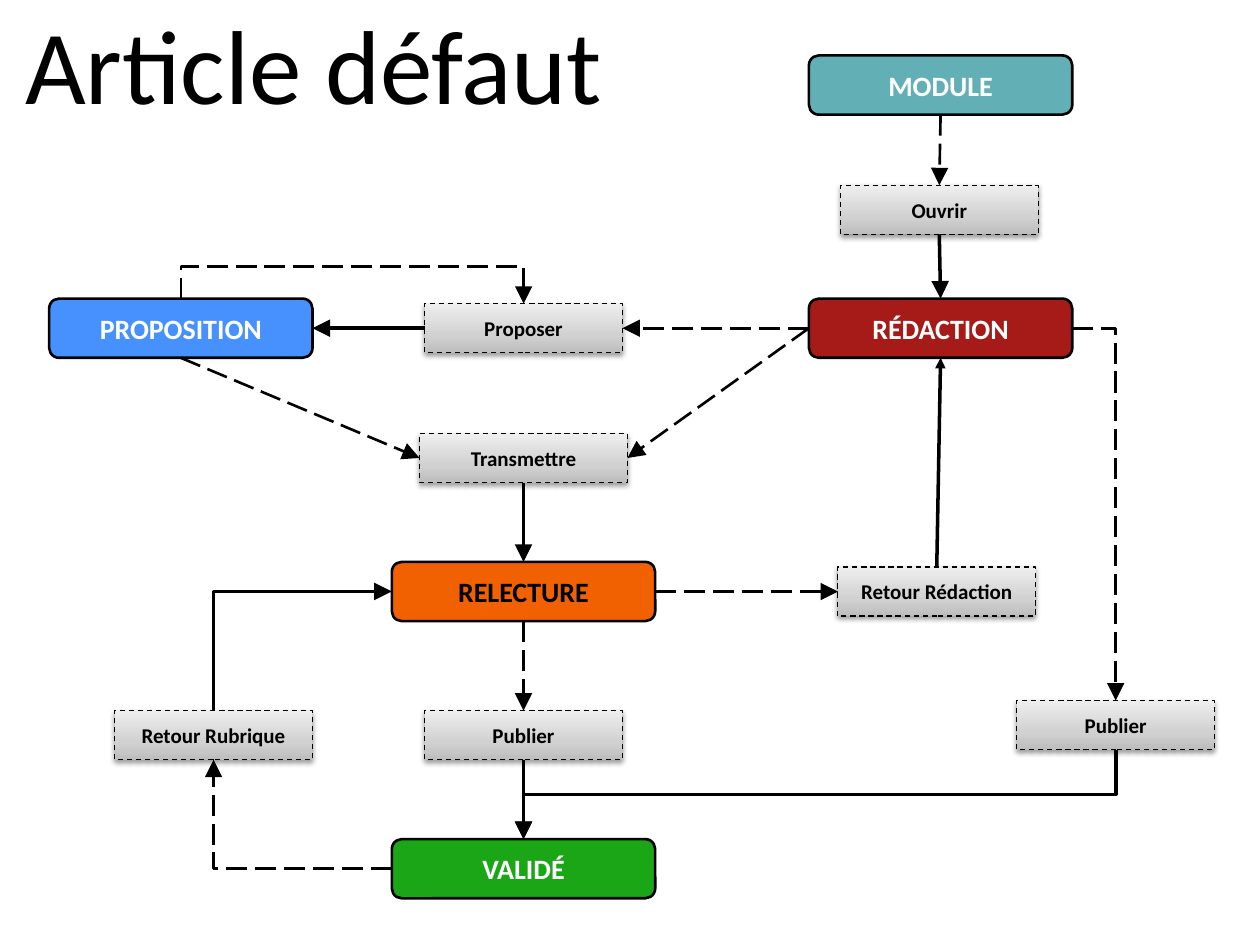
from lxml.etree import SubElement
from pptx import Presentation
from pptx.dml.color import RGBColor
from pptx.enum.dml import MSO_LINE
from pptx.enum.shapes import MSO_CONNECTOR, MSO_SHAPE
from pptx.enum.text import MSO_ANCHOR, PP_ALIGN
from pptx.oxml.ns import qn
from pptx.util import Inches, Pt

# Content: states as key: (left, top, fill, text colour)
TITLE = "Article défaut"
STATES = {
    "RÉDACTION": (6.42, 2.37, "A61B17", "FFFFFF"),
    "PROPOSITION": (0.39, 2.37, "4791FF", "FFFFFF"),
    "RELECTURE": (3.11, 4.46, "F26101", "000000"),
    "VALIDÉ": (3.11, 6.66, "1BA617", "FFFFFF"),
    "MODULE": (6.42, 0.44, "62B0B6", "FFFFFF"),
}
# Actions as key: (label, left, top, width)
ACTIONS = {
    "proposer": ("Proposer", 3.37, 2.41, 1.57),
    "transmettre": ("Transmettre", 3.33, 3.44, 1.65),
    "publier": ("Publier", 3.37, 5.64, 1.57),
    "retour rédaction": ("Retour Rédaction", 6.65, 4.5, 1.57),
    "ouvrir": ("Ouvrir", 6.67, 1.47, 1.57),
    "publier direct": ("Publier", 8.07, 5.56, 1.57),
    "retour rubrique": ("Retour Rubrique", 0.91, 5.64, 1.57),
}
TOP, LEFT, BOTTOM, RIGHT = range(4)  # connection sites
# Straight arrows: from, site, to, site; those leaving a state are dashed
ARROWS = [
    ("RÉDACTION", LEFT, "proposer", RIGHT),
    ("RÉDACTION", LEFT, "transmettre", RIGHT),
    ("proposer", LEFT, "PROPOSITION", RIGHT),
    ("PROPOSITION", BOTTOM, "transmettre", LEFT),
    ("RELECTURE", BOTTOM, "publier", TOP),
    ("transmettre", BOTTOM, "RELECTURE", TOP),
    ("publier", BOTTOM, "VALIDÉ", TOP),
    ("RELECTURE", RIGHT, "retour rédaction", LEFT),
    ("retour rédaction", TOP, "RÉDACTION", BOTTOM),
    ("ouvrir", BOTTOM, "RÉDACTION", TOP),
    ("MODULE", BOTTOM, "ouvrir", TOP),
]
# Bent arrows add: preset, rotation, flips, adjustment
BENT_ARROWS = [
    ("RÉDACTION", RIGHT, "publier direct", TOP, "bentConnector2", 0, (), None),
    ("PROPOSITION", TOP, "proposer", TOP, "bentConnector3", 270, ("flipH",), -635100),
    ("publier direct", BOTTOM, "VALIDÉ", TOP, "bentConnector3", 90, (), 50000),
    ("VALIDÉ", LEFT, "retour rubrique", BOTTOM, "bentConnector2", 180, (), None),
    ("retour rubrique", TOP, "RELECTURE", LEFT, "bentConnector2", 90, ("flipH", "flipV"), None),
]
GRADIENT = [(0, "BDBDBD"), (35, "D1D1D1"), (100, "EEEEEE")]
STATE_FONT = {"name": "Calibri", "size": Pt(16), "bold": True}
ACTION_FONT = {"name": "Calibri", "size": Pt(12), "bold": True}
TITLE_FONT = {"name": "Calibri", "size": Pt(60)}


def color(value):
    return RGBColor.from_string(value)


def write(box, text, font_format, text_color):
    frame = box.text_frame
    frame.vertical_anchor = MSO_ANCHOR.MIDDLE
    para = frame.paragraphs[0]
    para.alignment = PP_ALIGN.CENTER
    span = para.add_run()
    span.text = text
    for name, value in font_format.items():
        setattr(span.font, name, value)
    span.font.color.rgb = color(text_color)


def add_box(preset, left, top, width, height, line_width):
    box = slide.shapes.add_shape(
        preset, Inches(left), Inches(top), Inches(width), Inches(height))
    box.shadow.inherit = False
    box.line.color.rgb = color("000000")
    box.line.width = Pt(line_width)
    return box


def shade(box):
    """Three-stop grey gradient, lightest at the top, with a soft shadow."""
    box.fill.gradient()
    box.fill.gradient_angle = 90
    properties = box.element.spPr
    stops = properties.find(".//" + qn("a:gsLst"))
    for stop in list(stops):
        stops.remove(stop)
    for position, value in GRADIENT:
        stop = SubElement(stops, qn("a:gs"), pos=str(position * 1000))
        SubElement(stop, qn("a:srgbClr"), val=value)
    shadow = SubElement(
        properties.find(qn("a:effectLst")), qn("a:outerShdw"),
        blurRad=str(Pt(3.1)), dist=str(Pt(1.6)), dir="5400000", rotWithShape="0")
    tint = SubElement(shadow, qn("a:srgbClr"), val="000000")
    SubElement(tint, qn("a:alpha"), val="38000")


def add_arrow(kind, start, start_site, end, end_site):
    arrow = slide.shapes.add_connector(kind, 0, 0, 0, 0)
    arrow.begin_connect(boxes[start], start_site)
    arrow.end_connect(boxes[end], end_site)
    dashed = start in STATES
    arrow.line.color.rgb = color("000000")
    arrow.line.width = Pt(1.5 if dashed else 2)
    if dashed:
        arrow.line.dash_style = MSO_LINE.LONG_DASH
    size = "med" if start == "retour rédaction" else "lg"
    properties = arrow.element.spPr
    SubElement(properties.find(qn("a:ln")), qn("a:tailEnd"),
               type="triangle", w=size, len=size)
    SubElement(properties, qn("a:effectLst"))
    return arrow


def bend(arrow, preset, rotation, flips, adjustment):
    """Turn the connector about its centre so that it leaves the right side."""
    if rotation in (90, 270):
        shift = (arrow.width - arrow.height) // 2
        arrow.left, arrow.top = arrow.left + shift, arrow.top - shift
        arrow.width, arrow.height = arrow.height, arrow.width
    frame = arrow.element.spPr.find(qn("a:xfrm"))
    frame.set("rot", str(rotation * 60000))
    for flip in ("flipH", "flipV"):
        frame.set(flip, "1" if flip in flips else "0")
    geometry = arrow.element.spPr.find(qn("a:prstGeom"))
    geometry.set("prst", preset)
    if adjustment is not None:
        guides = geometry.find(qn("a:avLst"))
        SubElement(guides, qn("a:gd"), name="adj1", fmla=f"val {adjustment}")


deck = Presentation()
deck.slide_width, deck.slide_height = Inches(10), Inches(7.5)
slide = deck.slides.add_slide(deck.slide_layouts[5])

# Title
title = slide.shapes.title
title.left, title.top, title.width, title.height = 0, 0, Inches(4.98), Inches(0.99)
write(title, TITLE, TITLE_FONT, "000000")

# States and actions
boxes = {}
for label, (left, top, fill, text_color) in STATES.items():
    box = add_box(MSO_SHAPE.ROUNDED_RECTANGLE, left, top, 2.09, 0.47, 1.5)
    box.fill.solid()
    box.fill.fore_color.rgb = color(fill)
    write(box, label, STATE_FONT, text_color)
    boxes[label] = box
for key, (label, left, top, width) in ACTIONS.items():
    box = add_box(MSO_SHAPE.RECTANGLE, left, top, width, 0.39, 0.75)
    box.line.dash_style = MSO_LINE.DASH
    shade(box)
    write(box, label, ACTION_FONT, "000000")
    boxes[key] = box

# Arrows
for ends in ARROWS:
    add_arrow(MSO_CONNECTOR.STRAIGHT, *ends)
for *ends, preset, rotation, flips, adjustment in BENT_ARROWS:
    bend(add_arrow(MSO_CONNECTOR.ELBOW, *ends), preset, rotation, flips, adjustment)

deck.save("out.pptx")
